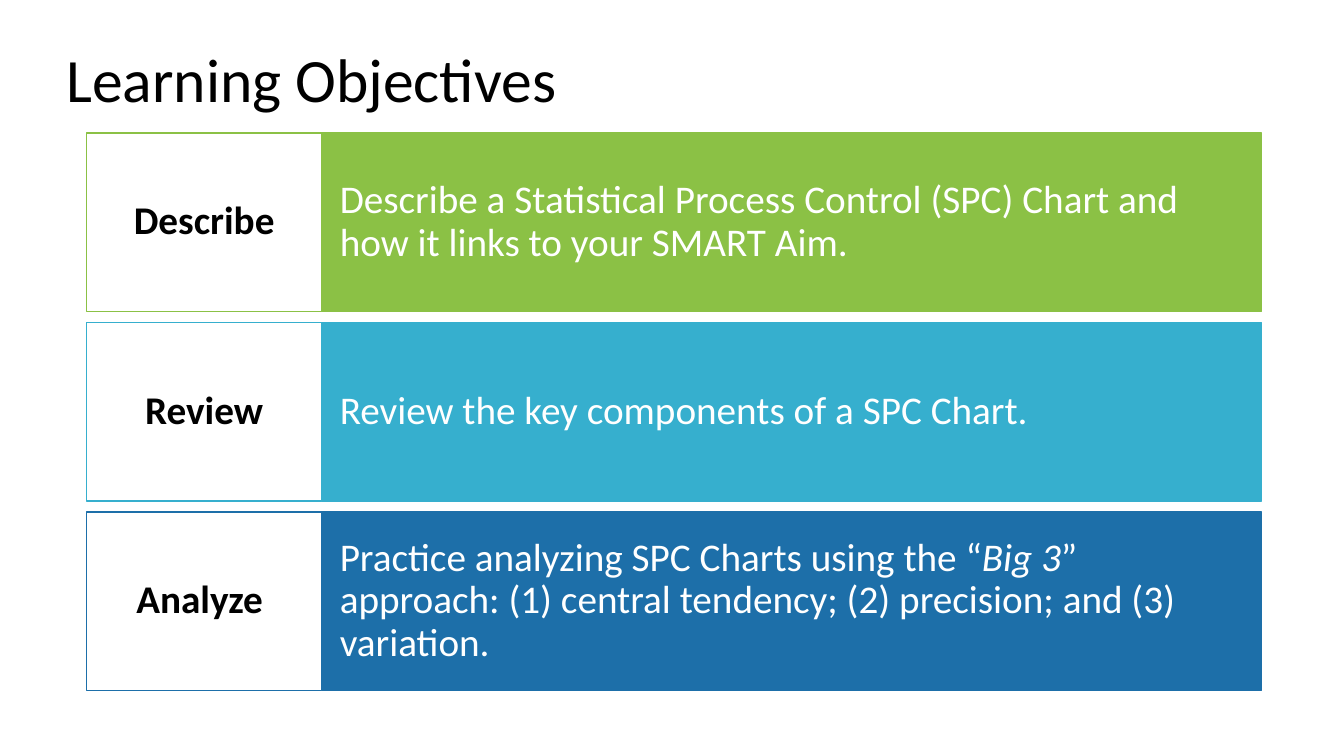
"""Build the Learning Objectives slide with three labelled rows."""
from pptx import Presentation
from pptx.dml.color import RGBColor
from pptx.enum.shapes import MSO_SHAPE
from pptx.enum.text import MSO_ANCHOR, PP_ALIGN
from pptx.util import Inches, Pt

RECTANGLE = MSO_SHAPE.RECTANGLE
MIDDLE = MSO_ANCHOR.MIDDLE
LEFT, CENTER = PP_ALIGN.LEFT, PP_ALIGN.CENTER
BLACK, WHITE = "000000", "FFFFFF"

OBJECTIVES = [
    ("Describe", "8BC145",
     ["Describe a Statistical Process Control (SPC) Chart and how it links to your SMART Aim."]),
    ("Review", "36AFCE", ["Review the key components of a SPC Chart."]),
    ("Analyze ", "1D6FA9",
     ["Practice analyzing SPC Charts using the “", "Big 3",
      "” approach: (1) central tendency; (2) precision; and (3) variation."]),
]
LABEL_LEFT, LABEL_WIDTH = 0.86, 2.33
GOAL_LEFT, GOAL_WIDTH = LABEL_LEFT + LABEL_WIDTH, 9.32
ROW_TOP, ROW_HEIGHT, ROW_GAP = 1.32, 1.77, 0.11


def rgb(color):
    return RGBColor.from_string(color)


class ObjectivesSlide:
    font = "Calibri"
    line_spacing = 0.9

    def __init__(self, presentation):
        self.slide = presentation.slides.add_slide(presentation.slide_layouts[6])

    def set_text(self, shape, runs, size, color, align=LEFT, bold=False, inset=0.1):
        frame = shape.text_frame
        frame.word_wrap = True
        frame.vertical_anchor = MIDDLE
        frame.margin_left = frame.margin_right = Inches(inset)
        paragraph = frame.paragraphs[0]
        paragraph.alignment = align
        paragraph.line_spacing = self.line_spacing
        paragraph.font.name = self.font
        paragraph.font.size = Pt(size)
        paragraph.font.bold = bold
        paragraph.font.color.rgb = rgb(color)
        for index, words in enumerate(runs):
            run = paragraph.add_run()
            run.text = words
            if index % 2:
                run.font.italic = True

    def title(self, words, left, top, width, height):
        heading = self.slide.shapes.add_textbox(
            Inches(left), Inches(top), Inches(width), Inches(height))
        self.set_text(heading, [words], 44, BLACK)

    def panel(self, runs, left, top, width, fill, line, **text_style):
        panel = self.slide.shapes.add_shape(
            RECTANGLE, Inches(left), Inches(top), Inches(width), Inches(ROW_HEIGHT))
        panel.shadow.inherit = False
        panel.fill.solid()
        panel.fill.fore_color.rgb = rgb(fill)
        panel.line.color.rgb = rgb(line)
        panel.line.width = Pt(1)
        self.set_text(panel, runs, 28, **text_style)


def main():
    presentation = Presentation()
    presentation.slide_width = Inches(13.33)
    presentation.slide_height = Inches(7.5)
    page = ObjectivesSlide(presentation)
    page.title("Learning Objectives", 0.56, 0.31, 8.62, 1.01)
    for row, (label, accent, goal) in enumerate(OBJECTIVES):
        top = ROW_TOP + row * (ROW_HEIGHT + ROW_GAP)
        page.panel(goal, GOAL_LEFT, top, GOAL_WIDTH, accent, accent,
                   color=WHITE, inset=0.18)
        page.panel([label], LABEL_LEFT, top, LABEL_WIDTH, WHITE, accent,
                   color=BLACK, align=CENTER, bold=True, inset=0.12)
    presentation.save("out.pptx")


if __name__ == "__main__":
    main()
